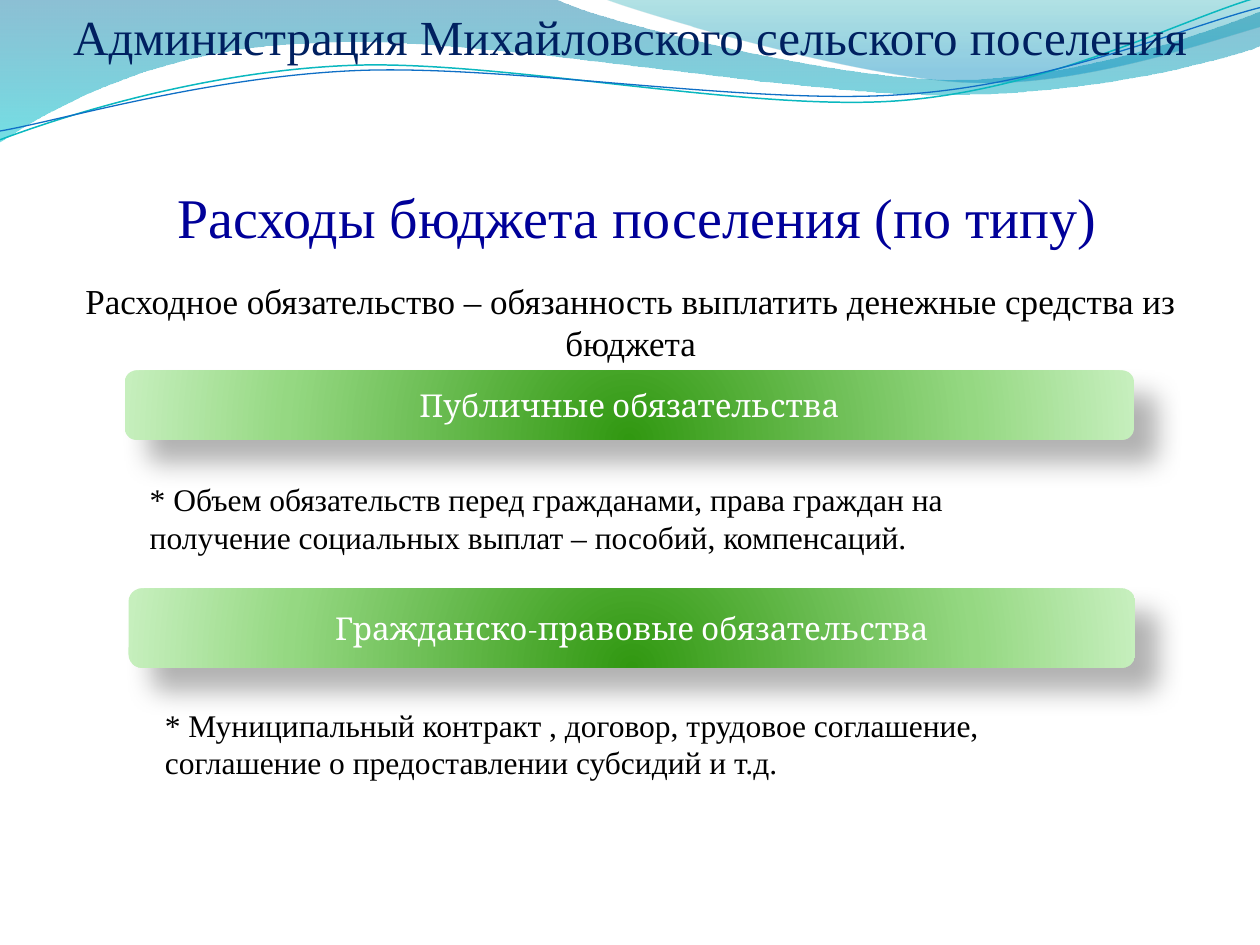
import math

import lxml.etree
import pptx
import pptx.dml.color
import pptx.enum.shapes
import pptx.enum.text
import pptx.oxml
import pptx.oxml.ns
import pptx.util

Inches = pptx.util.Inches
Pt = pptx.util.Pt
color = pptx.dml.color.RGBColor.from_string
qn = pptx.oxml.ns.qn
add_node = lxml.etree.SubElement
CENTER = pptx.enum.text.PP_ALIGN.CENTER
LEFT = pptx.enum.text.PP_ALIGN.LEFT


def set_gradient(shape, stops, direction):
    shape.fill.gradient()
    old = shape._element.spPr.find(qn("a:gradFill"))
    marks = "".join(
        f'<a:gs pos="{position * 1000}"><a:srgbClr val="{tone}">'
        f'<a:alpha val="{opacity * 1000}"/></a:srgbClr></a:gs>'
        for position, tone, opacity in stops
    )
    new = pptx.oxml.parse_xml(
        f'<a:gradFill {pptx.oxml.ns.nsdecls("a")} rotWithShape="1">'
        f"<a:gsLst>{marks}</a:gsLst>{direction}</a:gradFill>"
    )
    old.getparent().replace(old, new)


deck = pptx.Presentation()
deck.slide_width, deck.slide_height = Inches(10), Inches(7.5)
page = deck.slides.add_slide(deck.slide_layouts[6])

waves = [
    {
        "frame": (-0.01, -0.01, 10.02, 1.14),
        "pieces": [
            [(0, 0)], [(4.4, -0.01)],
            [(4.76, 0.17), (6.64, 0.63), (7.58, 0.63)],
            [(8.53, 0.63), (9.58, 0.26), (10, 0.09)], [(10.01, 0.36)],
            [(9.83, 0.44), (8.7, 0.76), (7.46, 0.75)],
            [(6.22, 0.75), (3.82, 0.28), (2.57, 0.34)],
            [(1.29, 0.36), (0.46, 0.83), (-0.01, 1.13)], [(0, 0)],
        ],
        "stops": [(0, "0074A1", 45), (100, "00C6CF", 55)],
    },
    {
        "frame": (4.79, -0.01, 5.21, 0.7),
        "pieces": [
            [(4.79, -0.01)],
            [(5.09, 0.11), (6.82, 0.62), (7.69, 0.65)],
            [(8.56, 0.69), (9.61, 0.32), (10, 0.21)],
            [(10, 0)], [(4.79, -0.01)],
        ],
        "stops": [(0, "00A1A9", 30), (80, "008BBF", 45)],
    },
    {
        "frame": (-0.02, 0.22, 10.02, 0.71),
        "pieces": [
            [(0, 1.11)],
            [(0.48, 0.93), (1.58, 0.57), (2.77, 0.52)],
            [(3.95, 0.47), (5.93, 0.89), (7.13, 0.8)],
            [(8.33, 0.71), (9.38, 0.15), (9.98, -0.02)],
        ],
        "turn": -2.7,
        "line": ("0AB8BF", 0.85),
    },
    {
        "frame": (-0.02, 0.3, 10.03, 0.58),
        "pieces": [
            [(0, 1.04)],
            [(0.47, 0.96), (1.64, 0.61), (2.83, 0.56)],
            [(4.03, 0.51), (5.97, 0.84), (7.17, 0.75)],
            [(8.36, 0.67), (9.41, 0.21), (10, 0.06)],
        ],
        "turn": -2.7,
        "line": ("0F6FC6", 0.75),
    },
]
for wave in waves:
    left, top, width, height = wave["frame"]
    turn = wave.get("turn", 0)
    cos, sin = math.cos(math.radians(turn)), math.sin(math.radians(turn))
    ends = [(Inches(piece[-1][0]), Inches(piece[-1][1])) for piece in wave["pieces"]]
    builder = page.shapes.build_freeform(*ends[0])
    builder.add_line_segments(ends[1:], close=False)
    shape = builder.convert_to_shape()
    for name, value in zip(("left", "top", "width", "height"), wave["frame"]):
        setattr(shape, name, Inches(value))
    shape.rotation = turn
    outline = next(shape._element.iter(qn("a:path")))
    for node in list(outline):
        outline.remove(node)
    outline.set("w", str(Inches(width)))
    outline.set("h", str(Inches(height)))
    for index, piece in enumerate(wave["pieces"]):
        tag = "a:moveTo" if index == 0 else "a:lnTo" if len(piece) == 1 else "a:cubicBezTo"
        node = add_node(outline, qn(tag))
        for x, y in piece:
            dx, dy = x - left - width / 2, y - top - height / 2
            add_node(node, qn("a:pt"),
                     x=str(Inches(width / 2 + dx * cos + dy * sin)),
                     y=str(Inches(height / 2 - dx * sin + dy * cos)))
    shape.shadow.inherit = False
    if "stops" in wave:
        add_node(outline, qn("a:close"))
        set_gradient(shape, wave["stops"], '<a:lin ang="5400000" scaled="0"/>')
        shape.line.fill.background()
    else:
        tone, weight = wave["line"]
        shape.fill.background()
        shape.line.color.rgb = color(tone)
        shape.line.width = Pt(weight)

blocks = [
    ("text", (0, 0, 10, 0.57), "Администрация Михайловского сельского поселения",
     28, "002060", CENTER),
    ("text", (0.45, 2.17, 9.11, 0.77),
     "Расходное обязательство – обязанность выплатить денежные средства из бюджета",
     20, "000000", CENTER),
    ("bar", (0.99, 2.94, 8.01, 0.55), "Публичные обязательства", 18, "FFFFFF", CENTER),
    ("text", (1.09, 3.76, 7.36, 0.71),
     "* Объем обязательств перед гражданами, права граждан на получение "
     "социальных выплат – пособий, компенсаций.", 18, "000000", LEFT),
    ("bar", (1.02, 4.67, 7.99, 0.63), "Гражданско-правовые обязательства",
     18, "FFFFFF", CENTER),
    ("text", (1.21, 5.55, 7.49, 0.71),
     "* Муниципальный контракт , договор, трудовое соглашение, соглашение "
     "о предоставлении субсидий и т.д.", 18, "000000", LEFT),
    ("text", (0.69, 1.4, 8.74, 0.64), "Расходы бюджета поселения (по типу)",
     32, "000099", CENTER),
]
for kind, frame, text, size, tone, align in blocks:
    place = [Inches(value) for value in frame]
    if kind == "bar":
        box = page.shapes.add_shape(pptx.enum.shapes.MSO_SHAPE.ROUNDED_RECTANGLE, *place)
        set_gradient(
            box, [(0, "319811", 100), (68, "95D882", 100), (100, "C6EFBD", 100)],
            '<a:path path="circle">'
            '<a:fillToRect l="50000" t="130000" r="50000" b="-30000"/></a:path>')
        box.line.fill.background()
        box.shadow.inherit = False
        effects = box._element.spPr.find(qn("a:effectLst"))
        shadow = add_node(
            effects, qn("a:outerShdw"), blurRad=str(Pt(15)), dist=str(Pt(18)),
            dir="2700000", algn="tl", rotWithShape="0")
        shade = add_node(shadow, qn("a:srgbClr"), val="000000")
        add_node(shade, qn("a:alpha"), val="30000")
        box.text_frame.vertical_anchor = pptx.enum.text.MSO_ANCHOR.MIDDLE
    else:
        box = page.shapes.add_textbox(*place)
        box.text_frame.auto_size = pptx.enum.text.MSO_AUTO_SIZE.SHAPE_TO_FIT_TEXT
    box.text_frame.word_wrap = True
    para = box.text_frame.paragraphs[0]
    para.alignment = align
    span = para.add_run()
    span.text = text
    values = {"size": Pt(size), "name": "Cambria" if kind == "bar" else "Times New Roman"}
    for name, value in values.items():
        setattr(span.font, name, value)
    span.font.color.rgb = color(tone)

deck.save("out.pptx")
